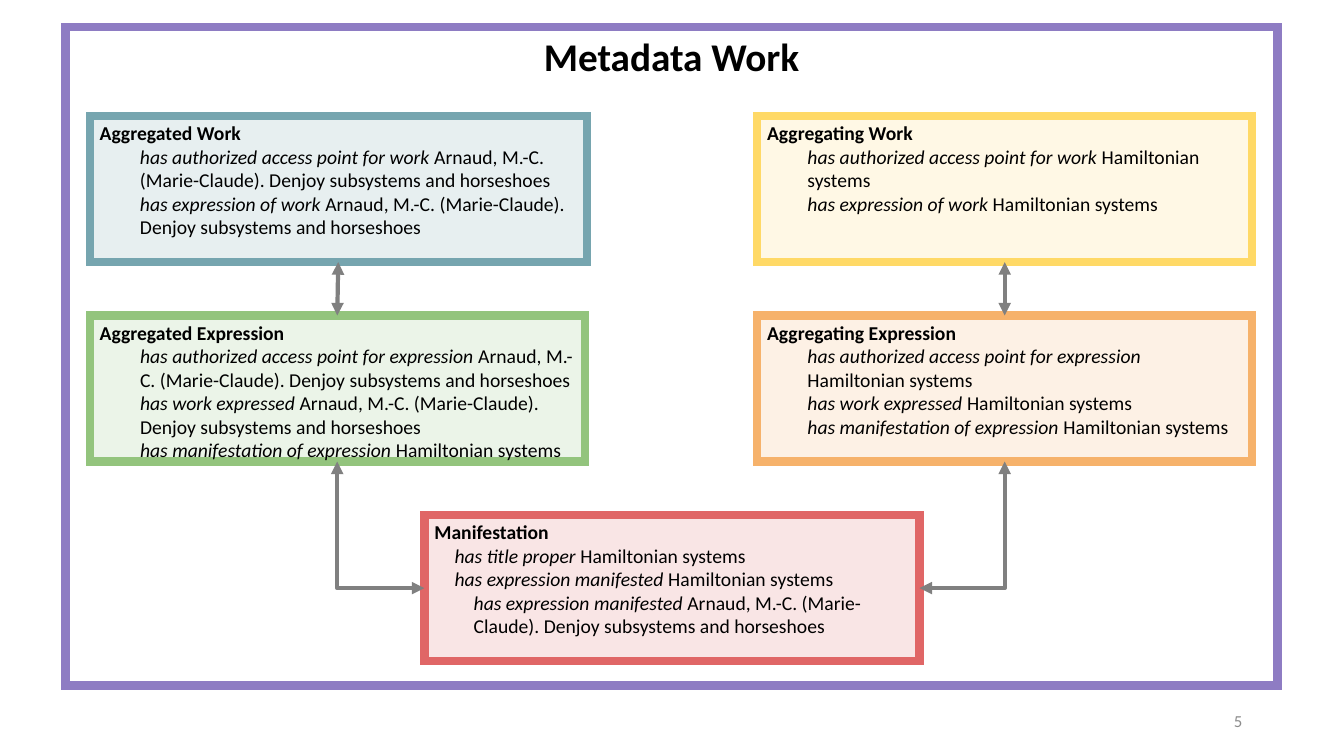
from lxml import etree
from pptx import Presentation
from pptx.dml.color import RGBColor
from pptx.enum.shapes import MSO_CONNECTOR, MSO_SHAPE
from pptx.enum.text import MSO_ANCHOR, MSO_AUTO_SIZE, PP_ALIGN
from pptx.oxml.ns import qn
from pptx.util import Inches, Pt

RECTANGLE = MSO_SHAPE.RECTANGLE
STRAIGHT, ELBOW = MSO_CONNECTOR.STRAIGHT, MSO_CONNECTOR.ELBOW
TOP, MIDDLE = MSO_ANCHOR.TOP, MSO_ANCHOR.MIDDLE
LEFT, CENTER, RIGHT = PP_ALIGN.LEFT, PP_ALIGN.CENTER, PP_ALIGN.RIGHT
NO_AUTOFIT = MSO_AUTO_SIZE.NONE
# Connection sites of a rectangle
SITE_TOP, SITE_LEFT, SITE_BOTTOM, SITE_RIGHT = range(4)

BOX_W, BOX_H = 4.91, 1.45
LEFT_X, RIGHT_X, MIDDLE_X = 0.89, 7.51, 4.21
WORK_Y, EXPRESSION_Y, MANIFESTATION_Y = 1.15, 3.13, 5.11

ARTICLE = "Arnaud, M.-C. (Marie-Claude). Denjoy subsystems and horseshoes"
VOLUME = "Hamiltonian systems"

# Each entity: box, fill, border, heading, properties as (indent, label, value)
ENTITIES = {
    "aggregated work": (
        (LEFT_X, WORK_Y, 4.93, BOX_H), "D0E0E3", "76A5AF", "Aggregated Work",
        [(0.4, "has authorized access point for work", ARTICLE),
         (0.4, "has expression of work", ARTICLE)]),
    "aggregating work": (
        (RIGHT_X, WORK_Y, BOX_W, BOX_H), "FFF2CC", "FFD966", "Aggregating Work",
        [(0.4, "has authorized access point for work", VOLUME),
         (0.4, "has expression of work", VOLUME)]),
    "aggregated expression": (
        (LEFT_X, EXPRESSION_Y, BOX_W, BOX_H), "D9EAD3", "93C47D", "Aggregated Expression",
        [(0.4, "has authorized access point for expression", ARTICLE),
         (0.4, "has work expressed", ARTICLE),
         (0.4, "has manifestation of expression", VOLUME)]),
    "aggregating expression": (
        (RIGHT_X, EXPRESSION_Y, BOX_W, BOX_H), "FCE5CD", "F6B26B", "Aggregating Expression",
        [(0.4, "has authorized access point for expression", VOLUME),
         (0.4, "has work expressed", VOLUME),
         (0.4, "has manifestation of expression", VOLUME)]),
    "manifestation": (
        (MIDDLE_X, MANIFESTATION_Y, BOX_W, BOX_H), "F4CCCC", "E06666", "Manifestation",
        [(0.2, "has title proper", VOLUME),
         (0.2, "has expression manifested", VOLUME),
         (0.39, "has expression manifested", ARTICLE)]),
}

RELATIONS = [
    (STRAIGHT, "aggregated work", SITE_BOTTOM, "aggregated expression", SITE_TOP),
    (STRAIGHT, "aggregating work", SITE_BOTTOM, "aggregating expression", SITE_TOP),
    (ELBOW, "manifestation", SITE_LEFT, "aggregated expression", SITE_BOTTOM),
    (ELBOW, "manifestation", SITE_RIGHT, "aggregating expression", SITE_BOTTOM),
]


def color(hex_string):
    return RGBColor.from_string(hex_string)


def set_format(target, values):
    for name, value in values.items():
        setattr(target, name, value)


def add_run(paragraph, text, size, hex_color="000000", **style):
    run = paragraph.add_run()
    run.text = text
    set_format(run.font, {"name": "Calibri", "size": Pt(size),
                          "bold": False, "italic": False, **style})
    run.font.color.rgb = color(hex_color)


def set_border(shape, hex_color):
    shape.line.color.rgb = color(hex_color)
    shape.line.width = Pt(6)
    etree.SubElement(shape.line._get_or_add_ln(), qn("a:miter"), lim="800000")


def set_frame(shape, anchor):
    set_format(shape.text_frame, {
        "word_wrap": True, "auto_size": NO_AUTOFIT, "vertical_anchor": anchor,
        "margin_left": Inches(0.1), "margin_right": Inches(0.1),
        "margin_top": Inches(0.05), "margin_bottom": Inches(0.05)})


def set_title(slide, box):
    """Turn the title placeholder into the frame around the whole diagram."""
    title = slide.shapes.title
    set_format(title, dict(zip(("left", "top", "width", "height"), map(Inches, box))))
    set_frame(title, TOP)
    set_border(title, "8E7CC3")
    heading = title.text_frame.paragraphs[0]
    heading.alignment = CENTER
    add_run(heading, "Metadata Work", 28, bold=True)


def add_entity(slide, box, fill, border, heading, properties):
    entity = slide.shapes.add_shape(RECTANGLE, *map(Inches, box))
    entity.shadow.inherit = False
    entity.fill.solid()
    entity.fill.fore_color.rgb = color(fill)
    fill_color = entity.fill._xPr.find(qn("a:solidFill"))[0]
    etree.SubElement(fill_color, qn("a:alpha"), val="50000")
    set_border(entity, border)
    set_frame(entity, TOP)

    first = entity.text_frame.paragraphs[0]
    first.alignment = LEFT
    add_run(first, heading, 14, bold=True)
    for indent, label, value in properties:
        paragraph = entity.text_frame.add_paragraph()
        paragraph.alignment = LEFT
        paragraph._p.get_or_add_pPr().set("marL", str(Inches(indent)))
        add_run(paragraph, label + " ", 14, italic=True)
        add_run(paragraph, value, 14)
    return entity


def site_point(shape, site):
    across = {SITE_LEFT: 0, SITE_RIGHT: shape.width}.get(site, shape.width // 2)
    down = {SITE_TOP: 0, SITE_BOTTOM: shape.height}.get(site, shape.height // 2)
    return shape.left + across, shape.top + down


def add_relation(slide, kind, start, start_site, end, end_site):
    """Join two entities with a two-headed arrow."""
    arrow = slide.shapes.add_connector(
        kind, *site_point(start, start_site), *site_point(end, end_site))
    arrow.begin_connect(start, start_site)
    arrow.end_connect(end, end_site)
    arrow.line.color.rgb = color("808080")
    arrow.line.width = Pt(3)
    for tip in ("a:headEnd", "a:tailEnd"):
        etree.SubElement(arrow.line._get_or_add_ln(), qn(tip), type="triangle")
    properties = arrow._element.spPr
    etree.SubElement(properties, qn("a:effectLst"))
    if kind == ELBOW:
        properties.find(qn("a:prstGeom")).set("prst", "bentConnector2")


def add_page_number(slide, box):
    page = slide.shapes.add_textbox(*map(Inches, box))
    set_frame(page, MIDDLE)
    number = page.text_frame.paragraphs[0]
    number.alignment = RIGHT
    add_run(number, "5", 12, "8C8C8C")


def main():
    deck = Presentation()
    deck.slide_width, deck.slide_height = Inches(13.33), Inches(7.5)
    slide = deck.slides.add_slide(deck.slide_layouts.get_by_name("Title Only"))
    set_title(slide, (0.65, 0.27, 12.02, 6.53))
    add_page_number(slide, (9.42, 6.95, 3, 0.4))
    entities = {key: add_entity(slide, *parts) for key, parts in ENTITIES.items()}
    for kind, start, start_site, end, end_site in RELATIONS:
        add_relation(slide, kind, entities[start], start_site, entities[end], end_site)
    deck.save("out.pptx")


if __name__ == "__main__":
    main()
